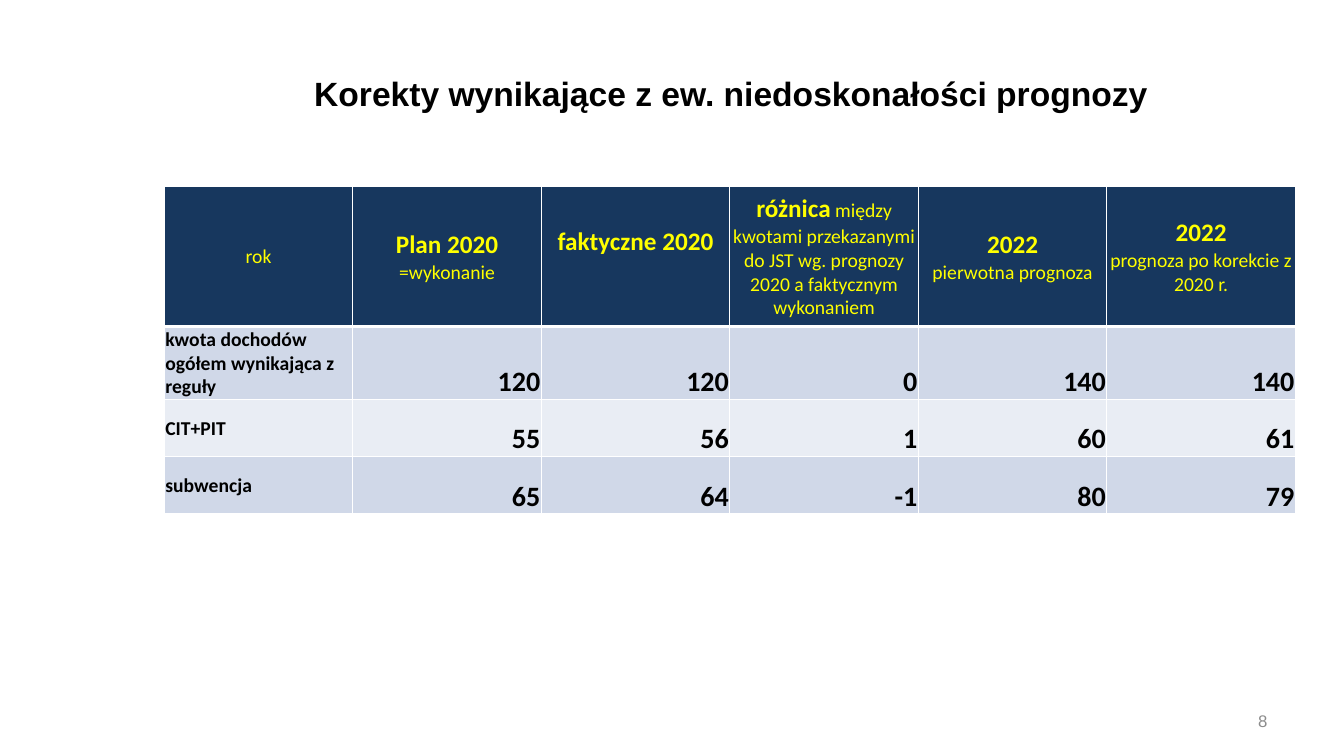
from lxml import etree
from pptx import Presentation, util as u
from pptx.dml.color import RGBColor
from pptx.enum import text
from pptx.oxml.ns import qn

WIDTH, HEIGHT = 13.33, 7.5
COLUMN = 1.87
ROW_HEIGHTS = [1.39, 0.72, 0.57, 0.57]
NAVY, YELLOW, BLACK, WHITE, GREY = "17375E", "FFFF00", "000000", "FFFFFF", "8C8C8C"
BANDS = ["D0D8E8", "E9EDF4"]
ALIGN, ANCHOR = text.PP_ALIGN, text.MSO_ANCHOR

# Header cells: lines of (wording, size, bold) runs
HEADERS = [
    [[("rok", 14, False)]],
    [[("Plan 2020", 18, True)], [("=wykonanie", 14, False)]],
    [[("faktyczne 2020", 18, True)], []],
    [[("różnica", 18, True),
      (" między kwotami przekazanymi do JST wg. prognozy 2020 a faktycznym wykonaniem", 14, False)]],
    [[("2022", 18, True)], [("pierwotna prognoza", 14, False)]],
    [[("2022", 18, True)], [("prognoza po korekcie z 2020 r.", 14, False)]],
]
ROWS = [
    ("kwota dochodów ogółem wynikająca z reguły", 120, 120, 0, 140, 140),
    ("CIT+PIT", 55, 56, 1, 60, 61),
    ("subwencja", 65, 64, -1, 80, 79),
]


def color(value):
    return RGBColor.from_string(value)


def write(frame, lines, align, ink, font="Calibri"):
    paragraph = frame.paragraphs[0]
    paragraph.alignment = align
    for index, line in enumerate(lines):
        if index:
            paragraph.add_line_break()
        for wording, size, bold in line:
            run = paragraph.add_run()
            run.text = wording
            run.font.name = font
            run.font.size = u.Pt(size)
            run.font.bold = bold
            run.font.color.rgb = color(ink)


def add_label(slide, box, run, align, ink):
    left, top, width, height = map(u.Inches, box)
    frame = slide.shapes.add_textbox(left, top, width, height).text_frame
    frame.word_wrap = True
    frame.vertical_anchor = ANCHOR.MIDDLE
    write(frame, [[run]], align, ink, "Arial")


def add_borders(cell, top, bottom):
    properties = cell._tc.get_or_add_tcPr()
    for side, points in (("L", 1), ("R", 1), ("T", top), ("B", bottom)):
        line = etree.SubElement(properties, qn("a:ln" + side), w=str(u.Pt(points)))
        fill = etree.SubElement(line, qn("a:solidFill"))
        etree.SubElement(fill, qn("a:srgbClr"), val=WHITE)


def style_cell(cell, fill, anchor, top=1, bottom=1):
    add_borders(cell, top, bottom)
    cell.fill.solid()
    cell.fill.fore_color.rgb = color(fill)
    cell.vertical_anchor = anchor
    cell.margin_left = cell.margin_right = cell.margin_top = u.Inches(0.01)
    cell.margin_bottom = 0


def add_forecast_table(slide, left, top):
    count = len(HEADERS)
    table = slide.shapes.add_table(
        len(ROW_HEIGHTS), count, u.Inches(left), u.Inches(top),
        u.Inches(COLUMN * count), u.Inches(sum(ROW_HEIGHTS))).table
    table.first_row = table.horz_banding = False
    for column in table.columns:
        column.width = u.Inches(COLUMN)
    for row, height in zip(table.rows, ROW_HEIGHTS):
        row.height = u.Inches(height)

    # Header row
    for index, lines in enumerate(HEADERS):
        cell = table.cell(0, index)
        style_cell(cell, NAVY, ANCHOR.MIDDLE, bottom=3)
        write(cell.text_frame, lines, ALIGN.CENTER, YELLOW)

    # Body rows: a label, then the amounts
    for number, values in enumerate(ROWS, start=1):
        for index, value in enumerate(values):
            cell = table.cell(number, index)
            size, align, anchor = ((20, ALIGN.RIGHT, ANCHOR.BOTTOM) if index
                                   else (14, ALIGN.LEFT, ANCHOR.MIDDLE))
            style_cell(cell, BANDS[(number - 1) % 2], anchor, top=3 if number == 1 else 1)
            write(cell.text_frame, [[(str(value), size, True)]], align, BLACK)


def main():
    presentation = Presentation()
    presentation.slide_width = u.Inches(WIDTH)
    presentation.slide_height = u.Inches(HEIGHT)
    slide = presentation.slides.add_slide(presentation.slide_layouts[6])

    # Page number, table and title
    add_label(slide, (9.56, 6.95, 3.11, 0.4), ("8", 12, False), ALIGN.RIGHT, GREY)
    add_forecast_table(slide, 1.63, 1.85)
    add_label(slide, (1.25, 0.3, 12, 1.25),
              ("Korekty wynikające z ew. niedoskonałości prognozy", 24, True), ALIGN.CENTER, BLACK)

    presentation.save("out.pptx")


if __name__ == "__main__":
    main()
